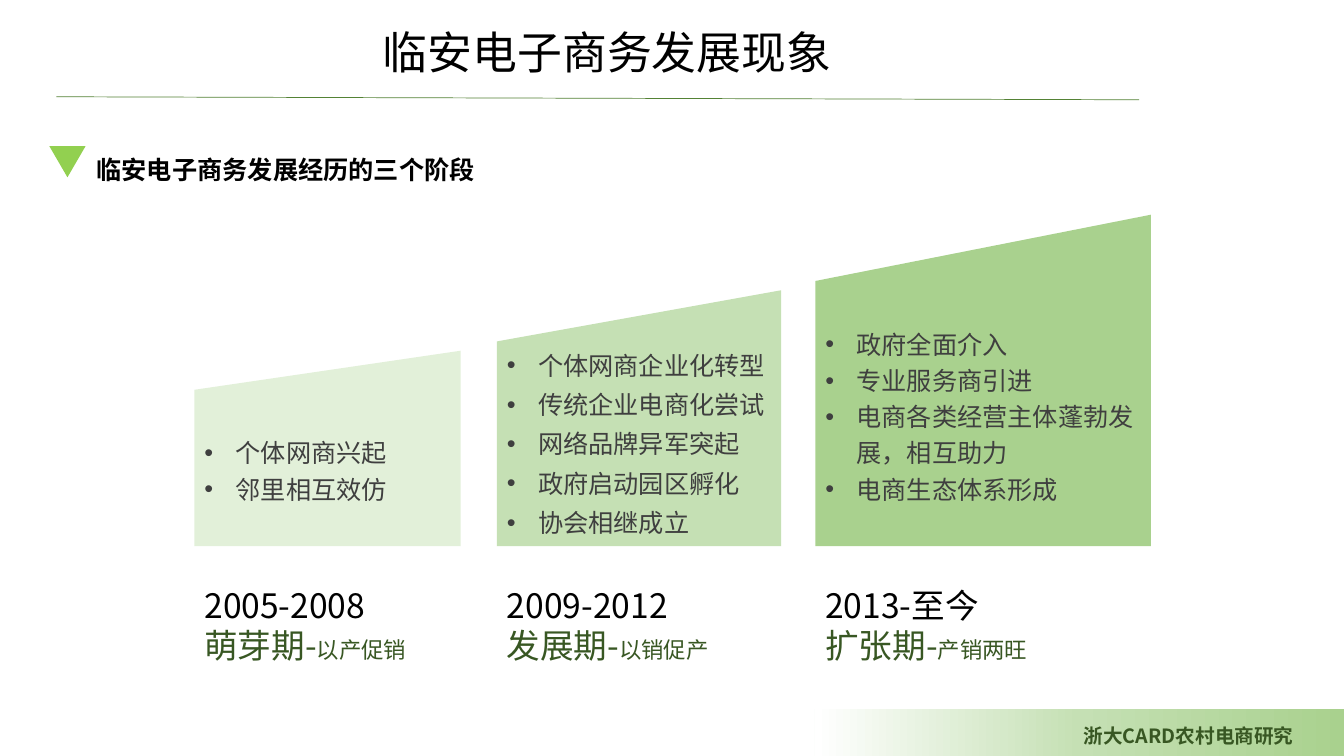
from copy import deepcopy

from lxml import etree
from pptx import Presentation
from pptx import util as u
from pptx.dml.color import RGBColor
from pptx.enum import shapes, text
from pptx.oxml.ns import qn

WIDTH, HEIGHT = u.Inches(13.33), u.Inches(7.5)
FONT = "Noto Sans CJK SC"
COLORS = {
    "black": "000000", "body": "3F3F3F", "deep": "385723", "rule": "548235",
    "marker": "92D050", "pale": "E2F0D9", "soft": "C5E0B4", "strong": "A9D18E",
    "white": "FFFFFF",
}
BASE = 72.25
STAGES = [
    {"left": 14.47, "top": 46.4, "width": 19.8, "fill": "pale",
     "spacings": [1.2, 1.2], "points": ["个体网商兴起", "邻里相互效仿"],
     "caption_width": 17.25, "align": text.PP_ALIGN.JUSTIFY,
     "years": "2005-2008", "name": "萌芽期-", "motto": "以产促销"},
    {"left": 36.97, "top": 38.4, "width": 21.15, "fill": "soft",
     "spacings": [None] + [1.3] * 4,
     "points": ["个体网商企业化转型", "传统企业电商化尝试", "网络品牌异军突起",
                "政府启动园区孵化", "协会相继成立"],
     "caption_width": 17.78, "align": text.PP_ALIGN.LEFT,
     "years": "2009-2012", "name": "发展期-", "motto": "以销促产"},
    {"left": 60.67, "top": 28.4, "width": 24.97, "fill": "strong",
     "spacings": [1.2] * 4,
     "points": ["政府全面介入", "专业服务商引进",
                "电商各类经营主体蓬勃发展，相互助力", "电商生态体系形成"],
     "caption_width": 21.45, "align": text.PP_ALIGN.LEFT,
     "years": "2013-至今", "name": "扩张期-", "motto": "产销两旺"},
]


def rgb(name):
    return RGBColor.from_string(COLORS[name])


def place(left, top, width, height):
    return (int(WIDTH * left / 100), int(HEIGHT * top / 100),
            int(WIDTH * width / 100), int(HEIGHT * height / 100))


def apply(target, formats):
    for attribute, value in formats.items():
        setattr(target, attribute, value)


def add_run(paragraph, words, size, color, bold=False):
    run = paragraph.add_run()
    run.text = words
    run.font.color.rgb = rgb(color)
    apply(run.font, {"size": u.Pt(size), "name": FONT, "bold": bold})
    etree.SubElement(run.font._element, qn("a:ea"), typeface=FONT)


def add_block(slide, kind, area, fill=None):
    block = slide.shapes.add_shape(kind, *place(*area))
    block.shadow.inherit = False
    block.line.fill.background()
    if fill:
        block.fill.solid()
        block.fill.fore_color.rgb = rgb(fill)
    return block


def add_text(slide, area, lines, align=text.PP_ALIGN.LEFT, spacing=None, wrap=True):
    frame = slide.shapes.add_textbox(*place(*area)).text_frame
    apply(frame, {"word_wrap": wrap, "auto_size": text.MSO_AUTO_SIZE.SHAPE_TO_FIT_TEXT})
    for index, runs in enumerate(lines):
        paragraph = frame.add_paragraph() if index else frame.paragraphs[0]
        apply(paragraph, {"alignment": align, "line_spacing": spacing})
        for run in runs:
            add_run(paragraph, *run)


def add_bullet(paragraph, words, spacing):
    properties = paragraph._p.get_or_add_pPr()
    indent = u.Inches(0.31)
    properties.set("marL", str(indent))
    properties.set("indent", str(-indent))
    etree.SubElement(properties, qn("a:buFont"), typeface="Arial")
    etree.SubElement(properties, qn("a:buChar"), char="•")
    apply(paragraph, {"alignment": text.PP_ALIGN.LEFT, "line_spacing": spacing})
    add_run(paragraph, words, 18, "body")


def add_stage(slide, stage):
    area = (stage["left"], stage["top"], stage["width"], BASE - stage["top"])
    step = add_block(slide, shapes.MSO_SHAPE.FLOWCHART_MANUAL_INPUT, area, stage["fill"])
    frame = step.text_frame
    apply(frame, {"word_wrap": True, "vertical_anchor": text.MSO_ANCHOR.MIDDLE})
    for index, (words, spacing) in enumerate(zip(stage["points"], stage["spacings"])):
        paragraph = frame.add_paragraph() if index else frame.paragraphs[0]
        add_bullet(paragraph, words, spacing)


def add_caption(slide, stage):
    lines = [[(stage["years"], 24, "black")],
             [(stage["name"], 24, "deep"), (stage["motto"], 16, "deep")]]
    add_text(slide, (stage["left"], 76.67, stage["caption_width"], 12.13),
             lines, stage["align"])


def add_footer(slide):
    band = add_block(slide, shapes.MSO_SHAPE.RECTANGLE, (60.6, 93.73, 39.4, 6.27))
    band.fill.gradient()
    band.fill.gradient_angle = 180
    first = band._element.spPr.find(".//" + qn("a:gs"))
    first.addnext(deepcopy(first))
    for stop, color, position in zip(band.fill.gradient_stops,
                                     ("strong", "soft", "white"), (0, 0.5, 1)):
        stop.color.rgb = rgb(color)
        stop.position = position
    add_text(slide, (79.88, 95.07, 20.17, 4.53),
             [[("浙大CARD农村电商研究", 14, "deep", True)]], text.PP_ALIGN.JUSTIFY)


def add_rule(slide):
    left, top, width, drop = place(4.2, 12.8, 80.55, 0.4)
    rule = slide.shapes.add_connector(shapes.MSO_CONNECTOR.STRAIGHT,
                                      left, top, left + width, top + drop)
    rule.line.color.rgb = rgb("rule")
    rule.line.width = u.Pt(0.5)
    etree.SubElement(rule._element.spPr, qn("a:effectLst"))


def add_heading(slide):
    marker = add_block(slide, shapes.MSO_SHAPE.ISOSCELES_TRIANGLE,
                       (3.67, 19.33, 2.7, 4.13), "marker")
    marker._element.spPr.find(qn("a:xfrm")).set("flipV", "1")
    add_text(slide, (6.45, 17.73, 29.93, 7.47),
             [[("临安电子商务发展经历的三个阶段", 18, "black", True)]],
             spacing=1.5, wrap=False)


def main():
    deck = Presentation()
    apply(deck, {"slide_width": WIDTH, "slide_height": HEIGHT})
    slide = deck.slides.add_slide(deck.slide_layouts[6])
    add_footer(slide)
    add_rule(slide)
    for add_part in (add_stage, add_caption):
        for stage in STAGES:
            add_part(slide, stage)
    add_text(slide, (27.75, 2.67, 46.42, 8.53),
             [[("临安电子商务发展现象", 32, "black")]], text.PP_ALIGN.JUSTIFY)
    add_heading(slide)
    deck.save("out.pptx")


if __name__ == "__main__":
    main()
